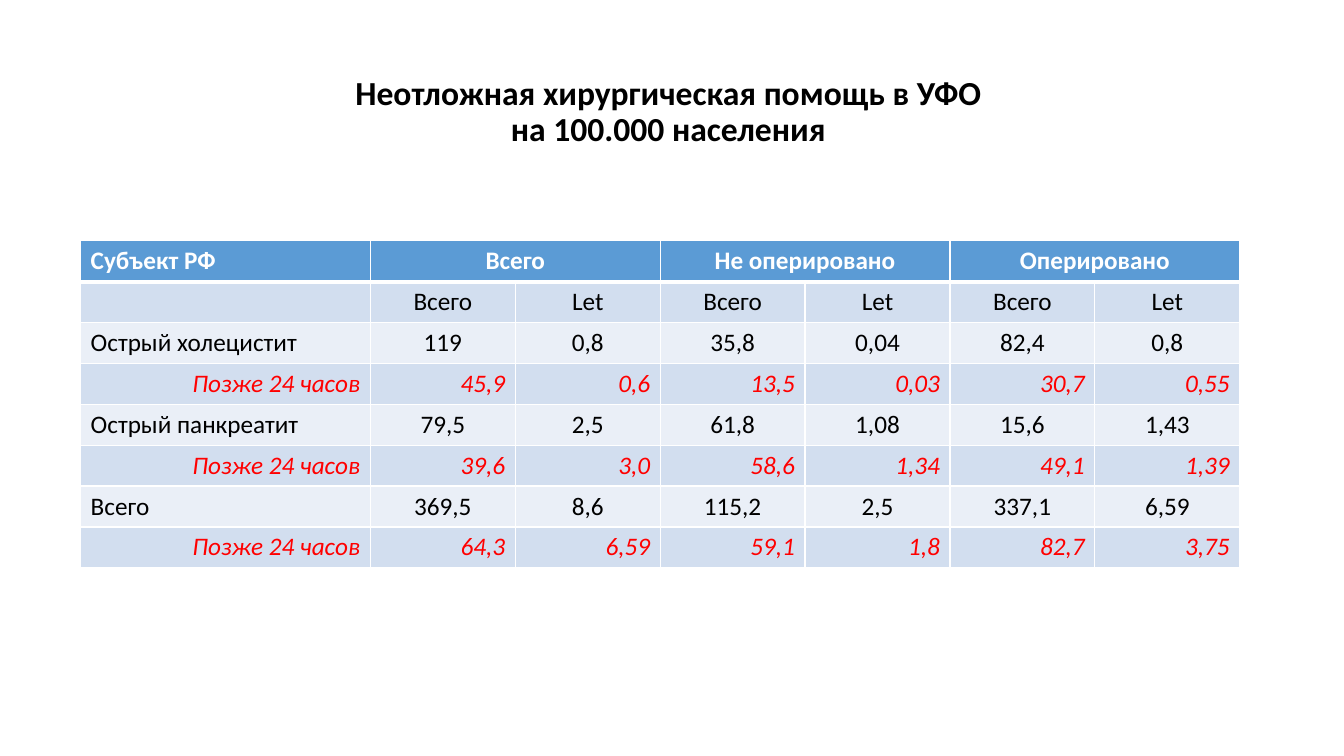
from lxml import etree
from pptx import Presentation
from pptx.dml.color import RGBColor
from pptx.enum import text
from pptx.oxml import ns
from pptx.util import Pt

COLORS = {
    "header": "5B9BD5",
    "dark_band": "D2DEEF",
    "light_band": "EAEFF7",
    "white": "FFFFFF",
    "black": "000000",
    "late": "FF0000",
}
FONT = "Calibri"
TITLE = "Неотложная хирургическая помощь в УФО\vна 100.000 населения"
LATE = "Позже 24 часов"
ROWS = [
    ["Субъект РФ", "Всего", "", "Не оперировано", "", "Оперировано", ""],
    [""] + ["Всего", "Let"] * 3,
    ["Острый холецистит", "119", "0,8", "35,8", "0,04", "82,4", "0,8"],
    [LATE, "45,9", "0,6", "13,5", "0,03", "30,7", "0,55"],
    ["Острый панкреатит", "79,5", "2,5", "61,8", "1,08", "15,6", "1,43"],
    [LATE, "39,6", "3,0", "58,6", "1,34", "49,1", "1,39"],
    ["Всего", "369,5", "8,6", "115,2", "2,5", "337,1", "6,59"],
    [LATE, "64,3", "6,59", "59,1", "1,8", "82,7", "3,75"],
]


def rgb(name):
    return RGBColor.from_string(COLORS[name])


def style_paragraph(paragraph, size, color, align, bold=False, italic=False):
    paragraph.alignment = align
    font = paragraph.font
    font.name, font.size = FONT, Pt(size)
    font.bold, font.italic = bold, italic
    font.color.rgb = rgb(color)


def set_borders(cell, top, bottom):
    properties = cell._tc.get_or_add_tcPr()
    for side, width in (("L", 1), ("R", 1), ("T", top), ("B", bottom)):
        line = etree.SubElement(properties, ns.qn(f"a:ln{side}"), w=str(Pt(width)))
        fill = etree.SubElement(line, ns.qn("a:solidFill"))
        etree.SubElement(fill, ns.qn("a:srgbClr"), val=COLORS["white"])


def add_title(slide, left, top, width, height):
    title = slide.shapes.title
    title.left, title.top = Pt(left), Pt(top)
    title.width, title.height = Pt(width), Pt(height)
    frame = title.text_frame
    frame.text = TITLE
    frame.word_wrap = True
    frame.auto_size = text.MSO_AUTO_SIZE.NONE
    frame.vertical_anchor = text.MSO_ANCHOR.MIDDLE
    paragraph = frame.paragraphs[0]
    paragraph.line_spacing = 0.9
    style_paragraph(paragraph, 24, "black", text.PP_ALIGN.CENTER, bold=True)


def add_care_table(slide, left, top, width, height):
    shape = slide.shapes.add_table(
        len(ROWS), len(ROWS[0]), Pt(left), Pt(top), Pt(width), Pt(height)
    )
    table = shape.table
    unit = width / 8
    for index, column in enumerate(table.columns):
        column.width = Pt(unit * (2 if index == 0 else 1))
    for row in table.rows:
        row.height = Pt(height / len(ROWS))
    for column in (1, 3, 5):
        table.cell(0, column).merge(table.cell(0, column + 1))

    for row, values in enumerate(ROWS):
        header, late = row == 0, values[0] == LATE
        band = "header" if header else "dark_band" if row % 2 else "light_band"
        color = "white" if header else "late" if late else "black"
        for column, value in enumerate(values):
            cell = table.cell(row, column)
            set_borders(cell, 3 if row == 1 else 1, 3 if header else 1)
            cell.fill.solid()
            cell.fill.fore_color.rgb = rgb(band)
            cell.text = value
            if late:
                align = text.PP_ALIGN.RIGHT
            else:
                align = text.PP_ALIGN.CENTER if column else text.PP_ALIGN.LEFT
            style_paragraph(
                cell.text_frame.paragraphs[0], 18, color, align, header, late
            )


def main():
    presentation = Presentation()
    presentation.slide_width, presentation.slide_height = Pt(960), Pt(540)
    slide = presentation.slides.add_slide(presentation.slide_layouts[5])
    add_title(slide, 63.4, 50.4, 828, 60.5)
    add_care_table(slide, 57.6, 172, 828, 233.6)
    presentation.save("out.pptx")


if __name__ == "__main__":
    main()
